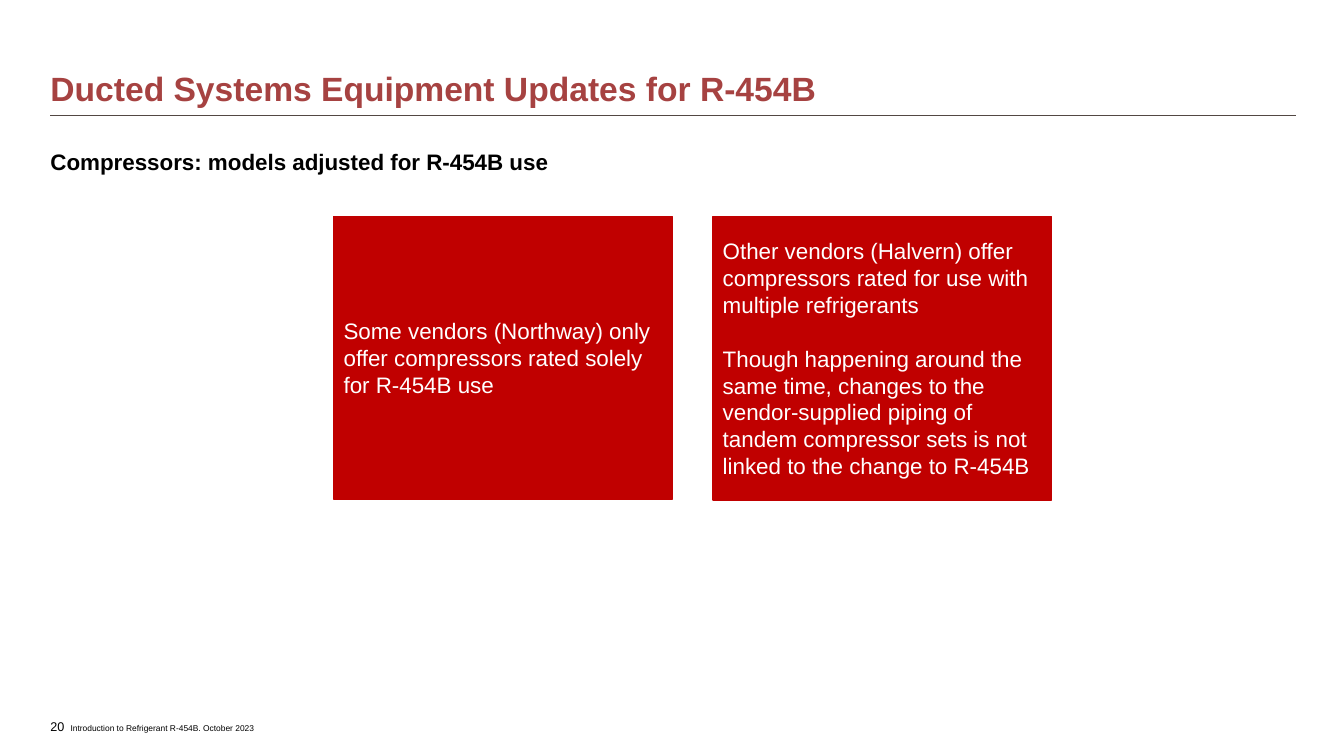
from dataclasses import dataclass

from lxml.etree import SubElement
from pptx import Presentation
from pptx.dml.color import RGBColor
from pptx.enum.shapes import MSO_CONNECTOR, MSO_SHAPE
from pptx.enum.text import MSO_ANCHOR, MSO_AUTO_SIZE, PP_ALIGN
from pptx.oxml.ns import qn
from pptx.util import Inches, Pt


@dataclass(frozen=True)
class Theme:
    font: str = "Arial"
    title: str = "A64241"
    text: str = "000000"
    panel: str = "C00000"
    panel_text: str = "FFFFFF"
    rule: str = "524743"
    title_size: int = 24
    body_size: int = 16
    number_size: int = 9
    footer_size: int = 6


THEME = Theme()
LEFT, CONTENT_WIDTH = 0.5, 12.35
PANEL_LEFT, PANEL_TOP, PANEL_WIDTH, PANEL_STEP = 3.31, 2.15, 3.36, 3.76
PANELS = [
    (2.8, ["Some vendors (Northway) only offer compressors rated solely for R-454B use"]),
    (2.81, [
        "Other vendors (Halvern) offer compressors rated for use with multiple refrigerants",
        "Though happening around the same time, changes to the vendor-supplied piping of "
        "tandem compressor sets is not linked to the change to R-454B",
    ]),
]


def write_text(shape, paragraphs, *, size, color, bold=False, anchor=MSO_ANCHOR.TOP,
               margins=(0, 0, 0, 0), line_spacing=None, gap=0, after=0):
    """Fill a shape with paragraphs; margins run left, top, right, bottom."""
    frame = shape.text_frame
    frame.word_wrap = True
    frame.auto_size = MSO_AUTO_SIZE.NONE
    frame.vertical_anchor = anchor
    (frame.margin_left, frame.margin_top,
     frame.margin_right, frame.margin_bottom) = map(Inches, margins)
    for index, text in enumerate(paragraphs):
        paragraph = frame.add_paragraph() if index else frame.paragraphs[0]
        properties = paragraph._p.get_or_add_pPr()
        properties.set("marL", "0")
        properties.set("indent", "0")
        SubElement(properties, qn("a:buNone"))
        paragraph.alignment = PP_ALIGN.LEFT
        paragraph.space_before = Pt(gap if index else 0)
        paragraph.space_after = Pt(after)
        if line_spacing is not None:
            paragraph.line_spacing = line_spacing
        run = paragraph.add_run()
        run.text = text
        run.font.name = THEME.font
        run.font.size = Pt(size)
        run.font.bold = bold
        run.font.color.rgb = RGBColor.from_string(color)


def place(shape, left, top, width, height):
    shape.left, shape.top = Inches(left), Inches(top)
    shape.width, shape.height = Inches(width), Inches(height)


def add_rule(slide, top):
    rule = slide.shapes.add_connector(
        MSO_CONNECTOR.STRAIGHT, Inches(LEFT), Inches(top),
        Inches(LEFT + CONTENT_WIDTH), Inches(top))
    rule.line.color.rgb = RGBColor.from_string(THEME.rule)
    rule.line.width = Pt(0.75)
    SubElement(rule._element.spPr, qn("a:effectLst"))


def add_label(slide, text, left, top, width, height, **text_format):
    label = slide.shapes.add_textbox(
        Inches(left), Inches(top), Inches(width), Inches(height))
    write_text(label, [text], color=THEME.text, **text_format)


def add_panel(slide, left, height, paragraphs):
    panel = slide.shapes.add_shape(
        MSO_SHAPE.RECTANGLE, Inches(left), Inches(PANEL_TOP),
        Inches(PANEL_WIDTH), Inches(height))
    panel.shadow.inherit = False
    panel.fill.solid()
    panel.fill.fore_color.rgb = RGBColor.from_string(THEME.panel)
    panel.line.color.rgb = RGBColor.from_string(THEME.panel)
    panel.line.width = Pt(1)
    write_text(panel, paragraphs, size=THEME.body_size, color=THEME.panel_text,
               anchor=MSO_ANCHOR.MIDDLE, margins=(0.1, 0.05, 0.1, 0.05), gap=19)


def main():
    presentation = Presentation()
    presentation.slide_width, presentation.slide_height = Inches(13.33), Inches(7.5)
    slide = presentation.slides.add_slide(presentation.slide_layouts[1])

    # Rule and footer
    add_rule(slide, 1.15)
    add_label(slide, "20", LEFT, 7.09, 0.39, 0.24,
              size=THEME.number_size, anchor=MSO_ANCHOR.MIDDLE)
    add_label(slide, "Introduction to Refrigerant R-454B. October 2023",
              0.7, 7.17, 2.2, 0.1, size=THEME.footer_size)

    # Title and subheading
    title, subheading = slide.placeholders
    place(title, LEFT, 0.21, CONTENT_WIDTH, 0.87)
    write_text(title, ["Ducted Systems Equipment Updates for R-454B"],
               size=THEME.title_size, color=THEME.title, bold=True,
               anchor=MSO_ANCHOR.BOTTOM, line_spacing=0.9)
    place(subheading, LEFT, 1.39, 8.33, 0.45)
    write_text(subheading, ["Compressors: models adjusted for R-454B use"],
               size=THEME.body_size, color=THEME.text, bold=True,
               margins=(0, 0.05, 0.1, 0.05), line_spacing=Pt(21), after=3)

    # Vendor panels
    for column, (height, paragraphs) in enumerate(PANELS):
        add_panel(slide, PANEL_LEFT + column * PANEL_STEP, height, paragraphs)

    presentation.save("out.pptx")


if __name__ == "__main__":
    main()
